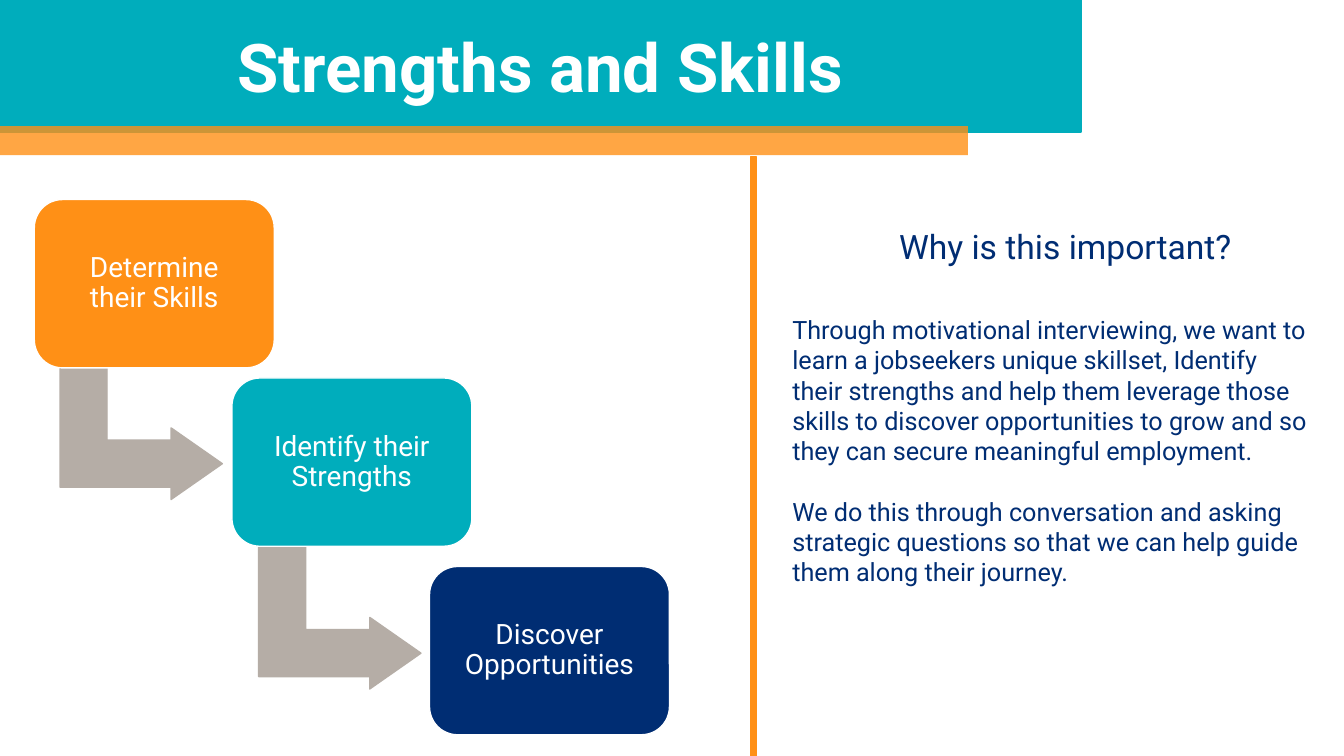
from dataclasses import dataclass

from lxml.etree import SubElement
from pptx import Presentation
from pptx.dml.color import RGBColor
from pptx.enum.shapes import MSO_SHAPE
from pptx.enum.text import MSO_ANCHOR, PP_ALIGN
from pptx.oxml.ns import qn
from pptx.util import Inches, Pt


@dataclass(frozen=True)
class Theme:
    font: str = "Roboto"
    orange: str = "FF9016"
    teal: str = "00ADBC"
    navy: str = "002D73"
    gray: str = "B5ADA6"
    white: str = "FFFFFF"
    title: int = 48
    head: int = 24
    step: int = 20
    body: int = 18


THEME = Theme()


def add_box(slide, kind, place, fill, line=None):
    box = slide.shapes.add_shape(kind, *map(Inches, place))
    box.shadow.inherit = False
    box.fill.solid()
    box.fill.fore_color.rgb = RGBColor.from_string(fill)
    if line:
        box.line.color.rgb = RGBColor.from_string(line)
        box.line.width = Pt(1)
    else:
        box.line.fill.background()
    return box


def write(shape, *texts, size, color, bold=False, align=PP_ALIGN.CENTER,
          anchor=MSO_ANCHOR.MIDDLE, inset=None, leading=None, gap=0):
    """Fill a shape with paragraphs; gap is the space in points between them."""
    frame = shape.text_frame
    frame.word_wrap = True
    frame.vertical_anchor = anchor
    if inset is not None:
        frame.margin_left = frame.margin_right = Inches(inset)
        frame.margin_top = frame.margin_bottom = Inches(inset)
    for i, text in enumerate(texts):
        para = frame.add_paragraph() if i else frame.paragraphs[0]
        para.alignment = align
        para.space_before = Pt(gap if i else 0)
        if leading:
            para.line_spacing = leading
        run = para.add_run()
        run.text = text
        run.font.name = THEME.font
        run.font.size = Pt(size)
        run.font.bold = bold
        run.font.color.rgb = RGBColor.from_string(color)


def add_text(slide, place, *texts, **style):
    box = slide.shapes.add_textbox(*map(Inches, place))
    write(box, *texts, anchor=MSO_ANCHOR.TOP, **style)


def add_step(slide, left, top, text, fill):
    card = add_box(slide, MSO_SHAPE.ROUNDED_RECTANGLE,
                   (left, top, 2.38, 1.67), fill, THEME.white)
    card.adjustments[0] = 0.167
    write(card, text, size=THEME.step, color=THEME.white,
          inset=0.16, leading=0.9)


def add_arrow(slide, left, top):
    arrow = add_box(slide, MSO_SHAPE.BENT_UP_ARROW,
                    (left, top, 1.42, 1.61), THEME.gray, THEME.gray)
    arrow.rotation = 90
    for i, value in enumerate((0.328, 0.25, 0.358)):
        arrow.adjustments[i] = value


def fade(shape, percent):
    """Set the opacity of a solid fill."""
    color = shape.fill._xPr.find(qn("a:solidFill"))[0]
    SubElement(color, qn("a:alpha"), val=str(percent * 1000))


def add_banner(slide):
    band = add_box(slide, MSO_SHAPE.RECTANGLE, (0, 0, 10.72, 1.31),
                   THEME.teal, THEME.teal)
    write(band, "Strengths and Skills", size=THEME.title,
          color=THEME.white, bold=True)
    strip = add_box(slide, MSO_SHAPE.RECTANGLE, (0, 1.25, 9.6, 0.29),
                    THEME.orange)
    fade(strip, 80)


def main():
    deck = Presentation()
    deck.slide_width, deck.slide_height = Inches(13.33), Inches(7.5)
    slide = deck.slides.add_slide(deck.slide_layouts[6])

    add_box(slide, MSO_SHAPE.RECTANGLE, (7.45, 1.55, 0.05, 5.95),
            THEME.orange, THEME.orange)

    for left, top in ((0.69, 3.44), (2.66, 5.32)):
        add_arrow(slide, left, top)
    steps = (
        (1.98, "Determine their Skills", THEME.orange),
        (3.75, "Identify their Strengths", THEME.teal),
        (5.62, "Discover Opportunities", THEME.navy),
    )
    for i, (top, text, fill) in enumerate(steps):
        add_step(slide, 0.34 + 1.96 * i, top, text, fill)

    add_text(slide, (8.29, 2.19, 4.55, 0.5), "Why is this important?",
             size=THEME.head, color=THEME.navy)
    add_text(
        slide, (7.76, 3.07, 5.32, 2.83),
        "Through motivational interviewing, we want to learn a jobseekers "
        "unique skillset, Identify their strengths and help them leverage "
        "those skills to discover opportunities to grow and so they can "
        "secure meaningful employment.",
        "We do this through conversation and asking strategic questions so "
        "that we can help guide them along their journey.",
        size=THEME.body, color=THEME.navy, align=PP_ALIGN.LEFT, gap=21.6)

    add_banner(slide)
    deck.save("out.pptx")


if __name__ == "__main__":
    main()
